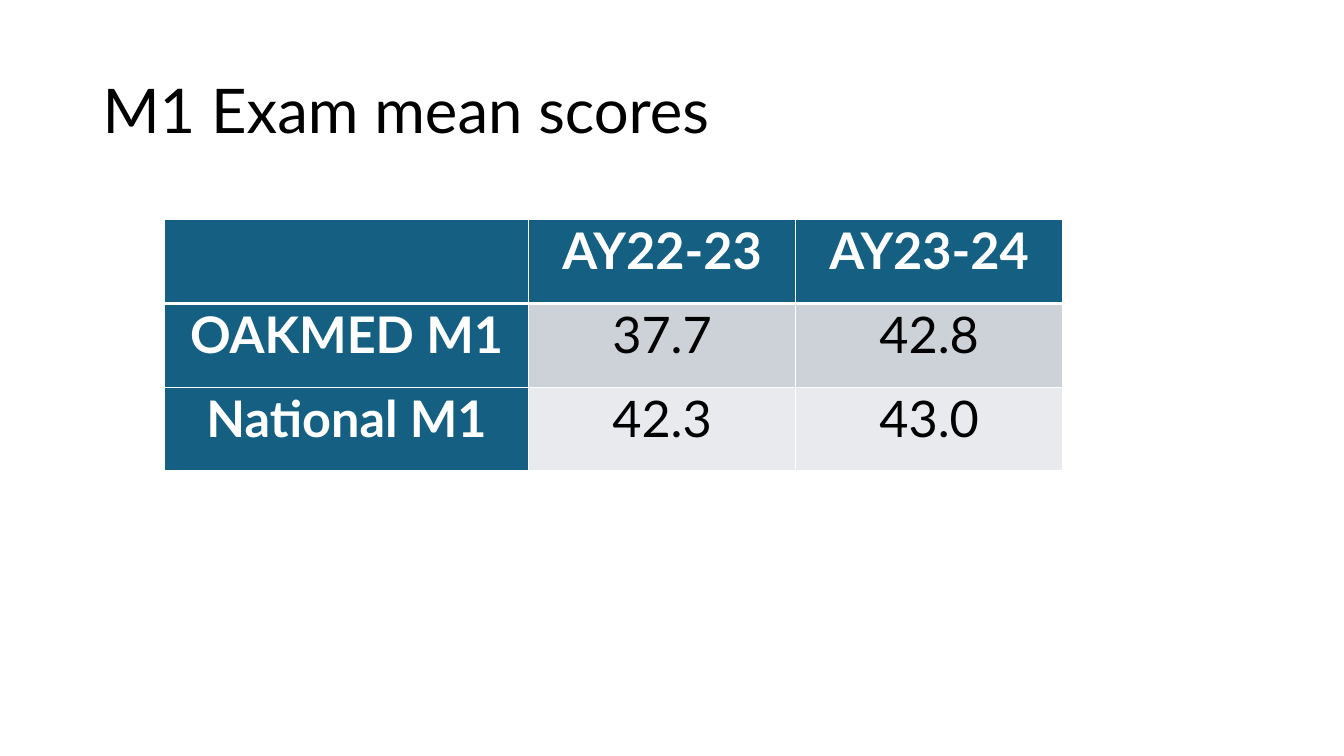
from lxml import etree
from pptx import Presentation
from pptx import util as u
from pptx.dml.color import RGBColor
from pptx.enum import text
from pptx.oxml.ns import qn

WHITE, BLACK, BLUE = "FFFFFF", "000000", "156082"
BAND_FILLS = ["CCD2D8", "E8EAED"]
SCORES = [
    ["", "AY22-23", "AY23-24"],
    ["OAKMED M1", "37.7", "42.8"],
    ["National M1", "42.3", "43.0"],
]


def set_font(font, color, **values):
    font.color.rgb = RGBColor.from_string(color)
    for name, value in {"name": "Lato", **values}.items():
        setattr(font, name, value)


def add_borders(cell, widths):
    """Draw white cell borders; widths maps the sides L, R, T, B to points."""
    properties = cell._tc.get_or_add_tcPr()
    for side, width in widths.items():
        line = etree.SubElement(properties, qn(f"a:ln{side}"), w=str(u.Pt(width)))
        fill = etree.SubElement(line, qn("a:solidFill"))
        etree.SubElement(fill, qn("a:srgbClr"), val=WHITE)


presentation = Presentation()
presentation.slide_width = u.Cm(33.87)
presentation.slide_height = u.Cm(19.05)
slide = presentation.slides.add_slide(presentation.slide_layouts[5])

title = slide.shapes.title
title.left, title.top, title.width, title.height = map(u.Cm, (2.33, 1.01, 29.21, 3.68))
title.text_frame.text = "M1 Exam mean scores"
title.text_frame.vertical_anchor = text.MSO_ANCHOR.MIDDLE
paragraph = title.text_frame.paragraphs[0]
paragraph.alignment = text.PP_ALIGN.LEFT
paragraph.line_spacing = 0.9
set_font(paragraph.runs[0].font, BLACK, size=u.Pt(44))

table = slide.shapes.add_table(
    3, 3, u.Cm(4.15), u.Cm(5.54), u.Cm(22.63), u.Cm(6.33)
).table
for column, width in zip(table.columns, (9.17, 6.73, 6.73)):
    column.width = u.Cm(width)

cell_format = {
    "margin_left": u.Cm(0.18),
    "margin_right": u.Cm(0.18),
    "margin_top": 0,
    "margin_bottom": 0,
}
for row_index, row in enumerate(SCORES):
    table.rows[row_index].height = u.Cm(2.11)
    for column_index, value in enumerate(row):
        cell = table.cell(row_index, column_index)
        is_header = row_index == 0 or column_index == 0
        for name, setting in cell_format.items():
            setattr(cell, name, setting)
        add_borders(cell, {
            "L": 1,
            "R": 1,
            "T": 3 if row_index == 1 else 1,
            "B": 3 if row_index == 0 else 1,
        })
        cell.fill.solid()
        cell.fill.fore_color.rgb = RGBColor.from_string(
            BLUE if is_header else BAND_FILLS[row_index - 1]
        )
        if value:
            cell.text = value
            paragraph = cell.text_frame.paragraphs[0]
            paragraph.alignment = text.PP_ALIGN.CENTER
            set_font(paragraph.runs[0].font, WHITE if is_header else BLACK,
                     size=u.Pt(36), bold=is_header)

presentation.save("out.pptx")
